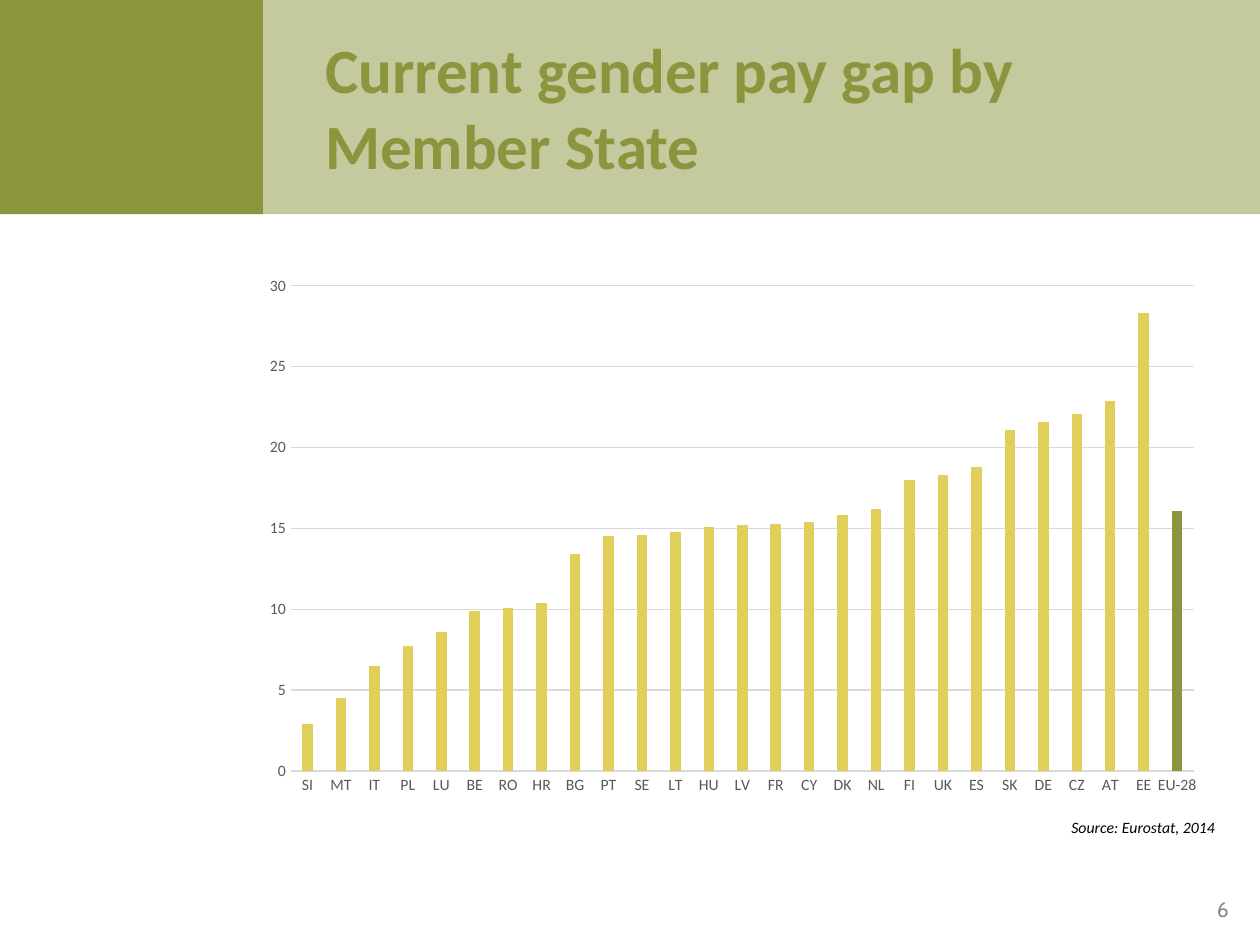
from dataclasses import dataclass
from lxml.etree import SubElement as Sub
from pptx import Presentation as Deck
from pptx.chart.data import CategoryChartData as Data
from pptx.dml.color import RGBColor as Rgb
from pptx.enum.chart import XL_CHART_TYPE as Kind, XL_TICK_MARK as Tick
from pptx.enum.shapes import MSO_SHAPE as Shape
from pptx.enum.text import MSO_ANCHOR as Anchor, MSO_AUTO_SIZE as Auto, PP_ALIGN as Align
from pptx.oxml.ns import qn
from pptx.util import Cm, Pt


@dataclass(frozen=True)
class Theme:
    olive: str = "8A953E"
    gold: str = "E1CF5A"
    grid: str = "D9D9D9"
    label: str = "595959"
    number: str = "8C8C8C"
    black: str = "000000"
    font: str = "Calibri"
    alt: str = "Cabin"
    title: int = 36
    page: int = 12
    body: int = 10
    small: int = 9


THEME = Theme()
GAPS = {
    "SI": 2.9, "MT": 4.5, "IT": 6.5, "PL": 7.7, "LU": 8.6, "BE": 9.9,
    "RO": 10.1, "HR": 10.4, "BG": 13.4, "PT": 14.5, "SE": 14.6, "LT": 14.8,
    "HU": 15.1, "LV": 15.2, "FR": 15.3, "CY": 15.4, "DK": 15.8, "NL": 16.2,
    "FI": 18, "UK": 18.3, "ES": 18.8, "SK": 21.1, "DE": 21.6, "CZ": 22.1,
    "AT": 22.9, "EE": 28.3, "EU-28": 16.1,
}


def style(font, size, color, name=THEME.font, bold=False, italic=False):
    font.size, font.name = Pt(size), name
    font.bold, font.italic = bold, italic
    font.color.rgb = Rgb.from_string(color)


def paint(fill, color):
    fill.solid()
    fill.fore_color.rgb = Rgb.from_string(color)


def rule(line, color):
    line.color.rgb = Rgb.from_string(color)
    line.width = Pt(0.75)


def write(shape, text, align=Align.LEFT, anchor=Anchor.TOP, **look):
    frame = shape.text_frame
    frame.word_wrap = True
    frame.auto_size = Auto.NONE
    frame.vertical_anchor = anchor
    para = frame.paragraphs[0]
    para.alignment = align
    run = para.add_run()
    run.text = text
    style(run.font, **look)


def band(slide, left, width, alpha=None):
    box = slide.shapes.add_shape(Shape.RECTANGLE, Cm(left), 0, Cm(width), Cm(4.32))
    box.shadow.inherit = False
    paint(box.fill, THEME.olive)
    box.line.fill.background()
    if alpha:
        color = box.fill._xPr.find(qn("a:solidFill"))[0]
        Sub(color, qn("a:alpha"), val=str(alpha * 1000))


def head(slide, text):
    title = slide.shapes.title
    title.left, title.top = Cm(6.3), Cm(0)
    title.width, title.height = Cm(18.21), Cm(4.29)
    write(title, text, anchor=Anchor.MIDDLE, size=THEME.title, color=THEME.olive, bold=True)
    tree = slide.shapes._spTree
    tree.remove(title._element)
    tree.append(title._element)


def label(slide, text, left, top, width, height, **look):
    box = slide.shapes.add_textbox(Cm(left), Cm(top), Cm(width), Cm(height))
    write(box, text, align=Align.RIGHT, **look)


def trim(axis):
    axis.major_tick_mark = axis.minor_tick_mark = Tick.NONE
    style(axis.tick_labels.font, THEME.small, THEME.label)


def bars(slide):
    data = Data()
    data.categories = list(GAPS)
    data.add_series("Series 1", GAPS.values())
    chart = slide.shapes.add_chart(
        Kind.COLUMN_CLUSTERED, Cm(5.05), Cm(5.36), Cm(19.46), Cm(10.87), data
    ).chart
    chart.has_legend = chart.has_title = False
    style(chart.font, THEME.body, THEME.black)
    cats, vals = chart.category_axis, chart.value_axis
    trim(cats)
    trim(vals)
    rule(cats.format.line, THEME.grid)
    vals.format.line.fill.background()
    vals.minimum_scale, vals.maximum_scale, vals.major_unit = 0, 30, 5
    rule(vals.major_gridlines.format.line, THEME.grid)
    plot = chart.plots[0]
    plot.vary_by_categories = False
    plot.gap_width, plot.overlap = 219, -27
    series = plot.series[0]
    paint(series.format.fill, THEME.gold)
    paint(series.points[len(GAPS) - 1].format.fill, THEME.olive)


def main():
    deck = Deck()
    deck.slide_width, deck.slide_height = Cm(25.4), Cm(19.05)
    slide = deck.slides.add_slide(deck.slide_layouts[5])
    label(slide, "6", 23.9, 17.93, 1.12, 0.79, anchor=Anchor.MIDDLE,
          size=THEME.page, color=THEME.number, name=THEME.alt)
    band(slide, 0, 5.3)
    band(slide, 5.3, 20.1, alpha=50)
    head(slide, "Current gender pay gap by Member State")
    bars(slide)
    label(slide, "Source: Eurostat, 2014", 12.6, 16.36, 12.14, 1.19,
          size=THEME.small, color=THEME.black, italic=True)
    deck.save("out.pptx")


if __name__ == "__main__":
    main()
